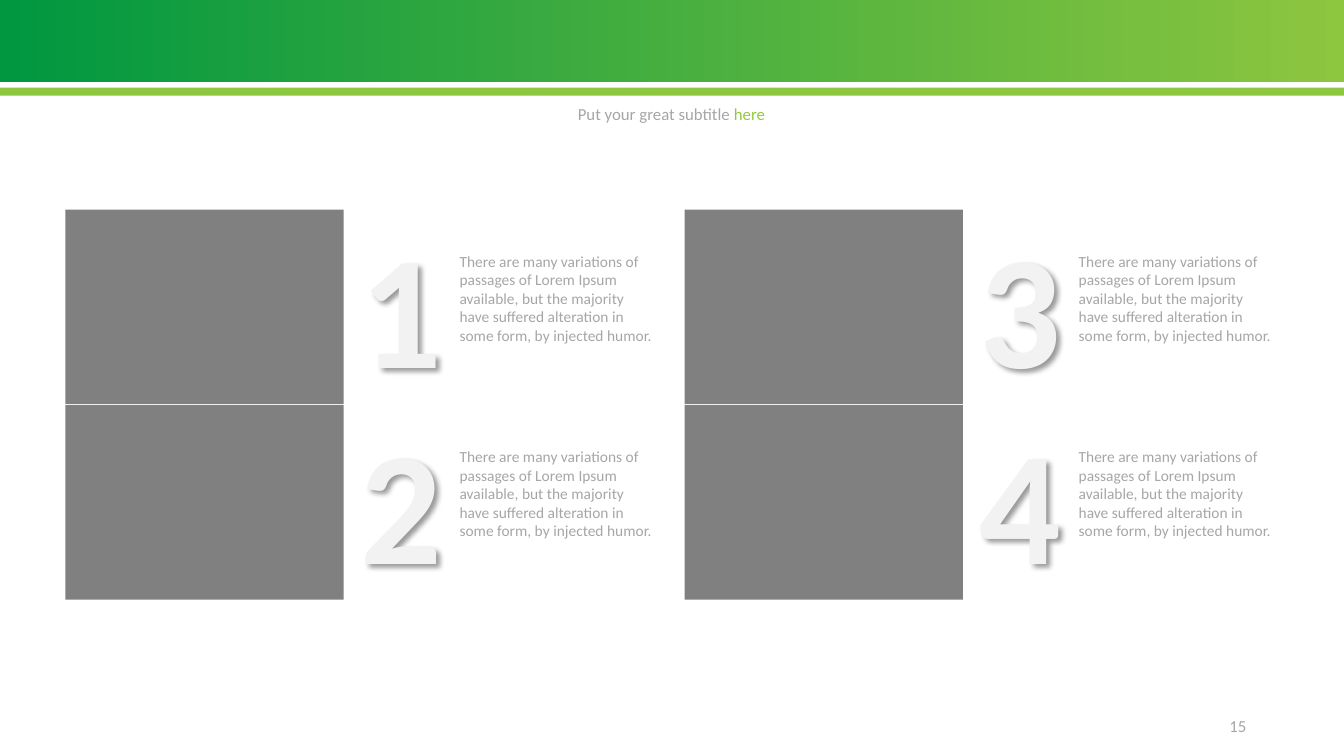
from pptx import Presentation
from pptx.dml.color import RGBColor
from pptx.enum.shapes import MSO_SHAPE
from pptx.enum.text import MSO_AUTO_SIZE, PP_ALIGN
from pptx.oxml import parse_xml
from pptx.oxml.ns import nsdecls
from pptx.util import Emu, Pt

RECTANGLE = MSO_SHAPE.RECTANGLE
FIT_TEXT = MSO_AUTO_SIZE.SHAPE_TO_FIT_TEXT
LEFT, CENTER, RIGHT = PP_ALIGN.LEFT, PP_ALIGN.CENTER, PP_ALIGN.RIGHT
PX = 9144
PAGE_WIDTH, PAGE_HEIGHT = 1333, 750
FONT = "Calibri"
COLORS = {
    "green": "009740",
    "mid": "78BF3F",
    "lime": "8DC63F",
    "accent": "95C93D",
    "text": "A6A6A6",
    "number": "F2F2F2",
    "outline": "D9D9D9",
    "photo": "808080",
}
BAND_STOPS = ((0, "green"), (85, "mid"), (100, "lime"))
BODY = ("There are many variations of passages of Lorem Ipsum available, "
        "but the majority have suffered alteration in some form, by injected humor.")


def px(*lengths):
    """Turn pixel lengths into EMU."""
    return [Emu(length * PX) for length in lengths]


def add_rectangle(page, box, color):
    """Add a plain filled rectangle."""
    shape = page.shapes.add_shape(RECTANGLE, *px(*box))
    shape.shadow.inherit = False
    shape.fill.solid()
    shape.fill.fore_color.rgb = RGBColor.from_string(COLORS[color])
    shape.line.fill.background()
    return shape


def add_text(page, box, runs, size, align=LEFT, wrap=True, bold=False,
             insets=(10, 5, 10, 5)):
    """Add a text box with one paragraph of (text, color) runs."""
    shape = page.shapes.add_textbox(*px(*box))
    frame = shape.text_frame
    frame.word_wrap = wrap
    frame.auto_size = FIT_TEXT
    (frame.margin_left, frame.margin_top,
     frame.margin_right, frame.margin_bottom) = px(*insets)
    para = frame.paragraphs[0]
    para.alignment = align
    for text, color in runs:
        span = para.add_run()
        span.text = text
        span.font.name = FONT
        span.font.size = Pt(size)
        span.font.bold = bold
        span.font.color.rgb = RGBColor.from_string(COLORS[color])
    return shape


def add_header(page, box):
    """Add the gradient band, the thin stripe and the subtitle."""
    left, top, width, height = box
    band = add_rectangle(page, box, "green")
    stops = "".join(
        f'<a:gs pos="{percent * 1000}"><a:srgbClr val="{COLORS[color]}"/></a:gs>'
        for percent, color in BAND_STOPS)
    properties = band.element.spPr
    solid = properties.find("{*}solidFill")
    properties.replace(solid, parse_xml(
        f'<a:gradFill {nsdecls("a")} rotWithShape="1"><a:gsLst>{stops}</a:gsLst>'
        '<a:lin ang="0" scaled="0"/></a:gradFill>'))
    add_rectangle(page, (left, top + height + 6, width, 8), "lime")
    add_text(page, (left + 561, top + height + 17, 210, 30),
             [("Put your great subtitle ", "text"), ("here", "accent")],
             12, CENTER, wrap=False)


def add_number(page, box, number):
    """Add a large outlined digit with a soft shadow."""
    shape = add_text(page, box, [(str(number), "number")], 115, CENTER,
                     wrap=False, bold=True)
    shape.element.spPr.append(parse_xml(
        f'<a:effectLst {nsdecls("a")}><a:outerShdw blurRad="50800" dist="38100" '
        'dir="2700000" algn="tl" rotWithShape="0"><a:srgbClr val="000000">'
        '<a:alpha val="40000"/></a:srgbClr></a:outerShdw></a:effectLst>'))
    font = shape.text_frame.paragraphs[0].runs[0].font
    font.fill.solid()
    font.color.rgb = RGBColor.from_string(COLORS["number"])
    shape.element.find(".//{*}rPr").insert(0, parse_xml(
        f'<a:ln {nsdecls("a")} w="12700"><a:solidFill>'
        f'<a:srgbClr val="{COLORS["outline"]}"><a:alpha val="50000"/></a:srgbClr>'
        '</a:solidFill><a:prstDash val="solid"/></a:ln>'))


def add_item(page, box, number):
    """Add a photo block with its number and description."""
    left, top, width, height = box
    add_rectangle(page, (left, top, 276, height), "photo")
    add_number(page, (left + 282, top - 7, 102, 204), number)
    add_text(page, (left + 381, top + 37, width - 381, 102),
             [(BODY, "text")], 11, insets=(10, 5, 16, 4))


def add_items(page, box, columns=2, rows=2):
    """Lay out the numbered items column by column."""
    left, top, width, height = box
    pitch_x, pitch_y = 614, 194
    for index in range(columns * rows):
        column, row = divmod(index, rows)
        add_item(page, (left + column * pitch_x, top + row * pitch_y,
                        width - pitch_x, height - pitch_y), index + 1)


def main():
    """Build and save the slide."""
    deck = Presentation()
    deck.slide_width, deck.slide_height = px(PAGE_WIDTH, PAGE_HEIGHT)
    page = deck.slides.add_slide(deck.slide_layouts[6])
    add_header(page, (0, -10, PAGE_WIDTH, 91))
    add_items(page, (65, 208, 1217, 387))
    add_text(page, (1102, 705, 144, 30), [("15", "text")], 12, RIGHT)
    deck.save("out.pptx")


if __name__ == "__main__":
    main()
